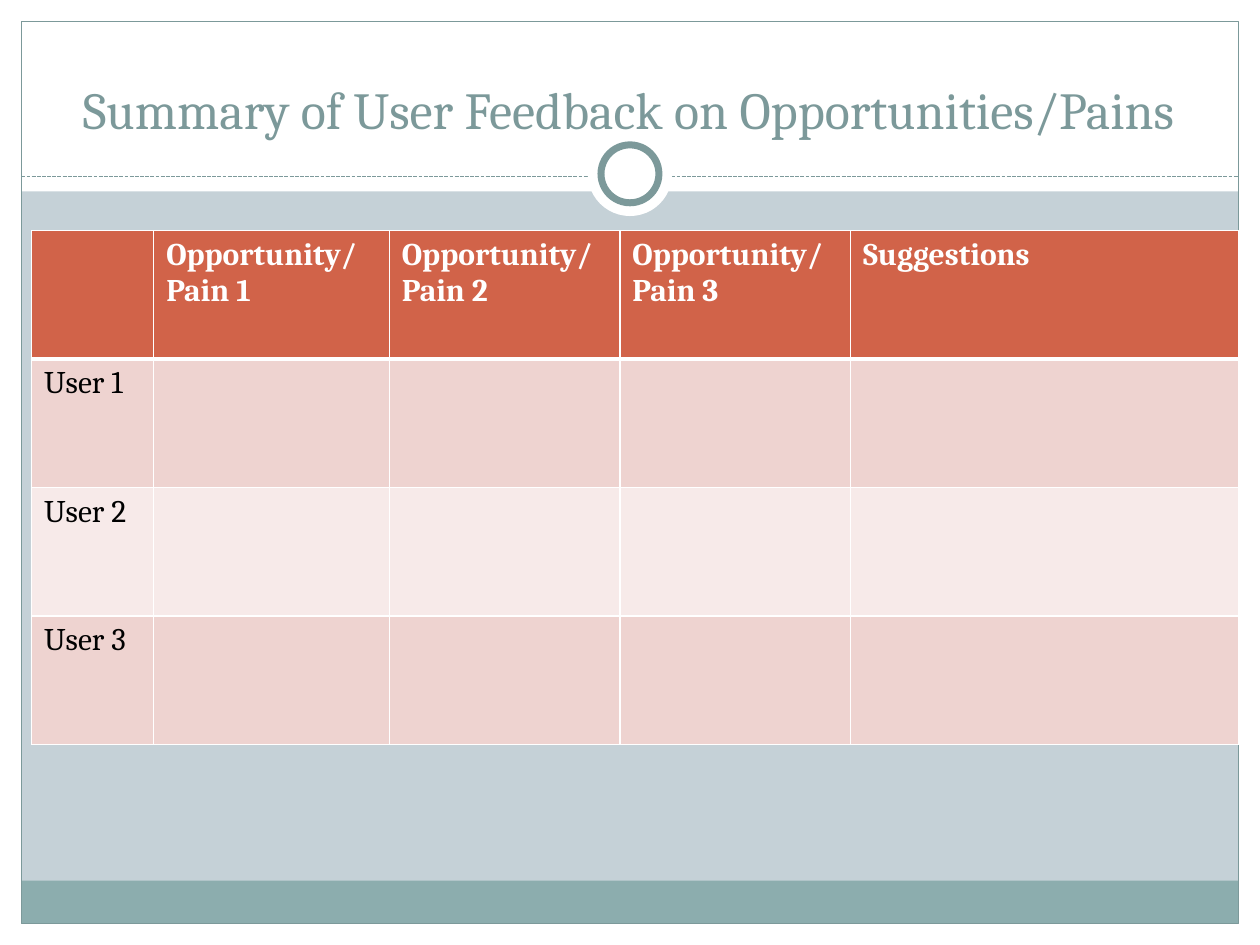
from lxml import etree
from pptx import Presentation
from pptx.dml.color import RGBColor
from pptx.enum.dml import MSO_LINE
from pptx.enum.shapes import MSO_CONNECTOR, MSO_SHAPE
from pptx.enum.text import MSO_ANCHOR, MSO_AUTO_SIZE, PP_ALIGN
from pptx.oxml.ns import qn
from pptx.util import Inches, Pt

RECT, OVAL = MSO_SHAPE.RECTANGLE, MSO_SHAPE.OVAL
STRAIGHT = MSO_CONNECTOR.STRAIGHT
DASH = MSO_LINE.SQUARE_DOT
LEFT, CENTER = PP_ALIGN.LEFT, PP_ALIGN.CENTER
BOTTOM = MSO_ANCHOR.BOTTOM
NO_FIT = MSO_AUTO_SIZE.NONE

WHITE = RGBColor(0xFF, 0xFF, 0xFF)
BLACK = RGBColor(0, 0, 0)
MIST = RGBColor(0xC5, 0xD1, 0xD7)
TEAL = RGBColor(0x8C, 0xAD, 0xAE)
SLATE = RGBColor(0x7C, 0x99, 0x9A)
RUST = RGBColor(0xD1, 0x63, 0x49)
ROSE = RGBColor(0xEE, 0xD3, 0xD0)
BLUSH = RGBColor(0xF7, 0xEA, 0xE9)

FONT = "Cambria"
WIDE, HIGH = 10, 7.5
EDGE = 0.17
COLS = [0.97, 1.87, 1.83, 1.83, 3.08]
HEADS = [""] + [f"Opportunity/Pain {n}" for n in (1, 2, 3)] + ["Suggestions"]
USERS = [f"User {n}" for n in (1, 2, 3)]


def write(frame, text, size=18, color=BLACK, bold=False, align=LEFT):
    para = frame.paragraphs[0]
    para.alignment = align
    run = para.add_run()
    run.text = text
    font = run.font
    font.name, font.size, font.bold = FONT, Pt(size), bold
    font.color.rgb = color


def draw(slide, kind, box, fill=None, line=None, width=0.75):
    shape = slide.shapes.add_shape(kind, *map(Inches, box))
    shape.shadow.inherit = False
    if fill is None:
        shape.fill.background()
    else:
        shape.fill.solid()
        shape.fill.fore_color.rgb = fill
    if line is None:
        shape.line.fill.background()
    else:
        shape.line.color.rgb = line
        shape.line.width = Pt(width)


def add_frame(slide, box, split):
    left, top, width, height = box
    right, base = left + width, top + height
    inner = (left + EDGE, top + EDGE, width - 2 * EDGE, height - 2 * EDGE)
    for side in [
        (left, base - EDGE, width, EDGE),
        (left, top, width, split),
        (left, top, EDGE, height),
        (right - EDGE, top, EDGE, height),
    ]:
        draw(slide, RECT, side, WHITE)
    band = 0.34
    draw(slide, RECT, (inner[0], base - EDGE - band, inner[2], band), TEAL)
    draw(slide, RECT, inner, line=SLATE)


def add_rule(slide, left, right, y):
    rule = slide.shapes.add_connector(
        STRAIGHT, Inches(left), Inches(y), Inches(right), Inches(y))
    rule.line.color.rgb = SLATE
    rule.line.width = Pt(0.75)
    rule.line.dash_style = DASH
    etree.SubElement(rule._element.spPr, qn("a:effectLst"))


def add_ring(slide, x, y):
    for size, line in ((0.67, None), (0.46, SLATE)):
        box = (x - size / 2, y - size / 2, size, size)
        draw(slide, OVAL, box, WHITE, line, 4)


def add_title(slide, box, text):
    title = slide.shapes.title
    title.left, title.top, title.width, title.height = map(Inches, box)
    frame = title.text_frame
    frame.word_wrap = True
    frame.auto_size = NO_FIT
    frame.vertical_anchor = BOTTOM
    write(frame, text, size=29.7, color=SLATE, align=CENTER)
    slide.shapes._spTree.append(title._element)


def edge_cell(cell, top, base):
    props = cell._tc.get_or_add_tcPr()
    sides = (("L", 1), ("R", 1), ("T", top), ("B", base))
    for spot, (side, width) in enumerate(sides):
        line = etree.Element(qn(f"a:ln{side}"), w=str(Pt(width)))
        fill = etree.SubElement(line, qn("a:solidFill"))
        etree.SubElement(fill, qn("a:srgbClr"), val=str(WHITE))
        props.insert(spot, line)


def add_grid(slide, box):
    rows = [HEADS] + [[user] + [""] * (len(COLS) - 1) for user in USERS]
    table = slide.shapes.add_table(
        len(rows), len(COLS), *map(Inches, box)).table
    for col, width in zip(table.columns, COLS):
        col.width = Inches(width)
    for r, row in enumerate(rows):
        head = r == 0
        table.rows[r].height = Inches(box[3] / len(rows))
        for c, text in enumerate(row):
            cell = table.cell(r, c)
            cell.fill.solid()
            cell.fill.fore_color.rgb = RUST if head else (BLUSH, ROSE)[r % 2]
            edge_cell(cell, 3 if r == 1 else 1, 3 if head else 1)
            if text:
                write(cell.text_frame, text, bold=head,
                      color=WHITE if head else BLACK)


def main():
    deck = Presentation()
    deck.slide_width, deck.slide_height = Inches(WIDE), Inches(HIGH)
    slide = deck.slides.add_slide(deck.slide_layouts[5])
    back = slide.background.fill
    back.solid()
    back.fore_color.rgb = MIST
    add_frame(slide, (0, 0, WIDE, HIGH), 1.52)
    add_rule(slide, EDGE, WIDE - EDGE, 1.4)
    add_ring(slide, WIDE / 2, 1.38)
    add_title(slide, (0.33, 0.33, 9.33, 0.83),
              "Summary of User Feedback on Opportunities/Pains")
    add_grid(slide, (0.25, 1.83, sum(COLS), 4.08))
    deck.save("out.pptx")


if __name__ == "__main__":
    main()
